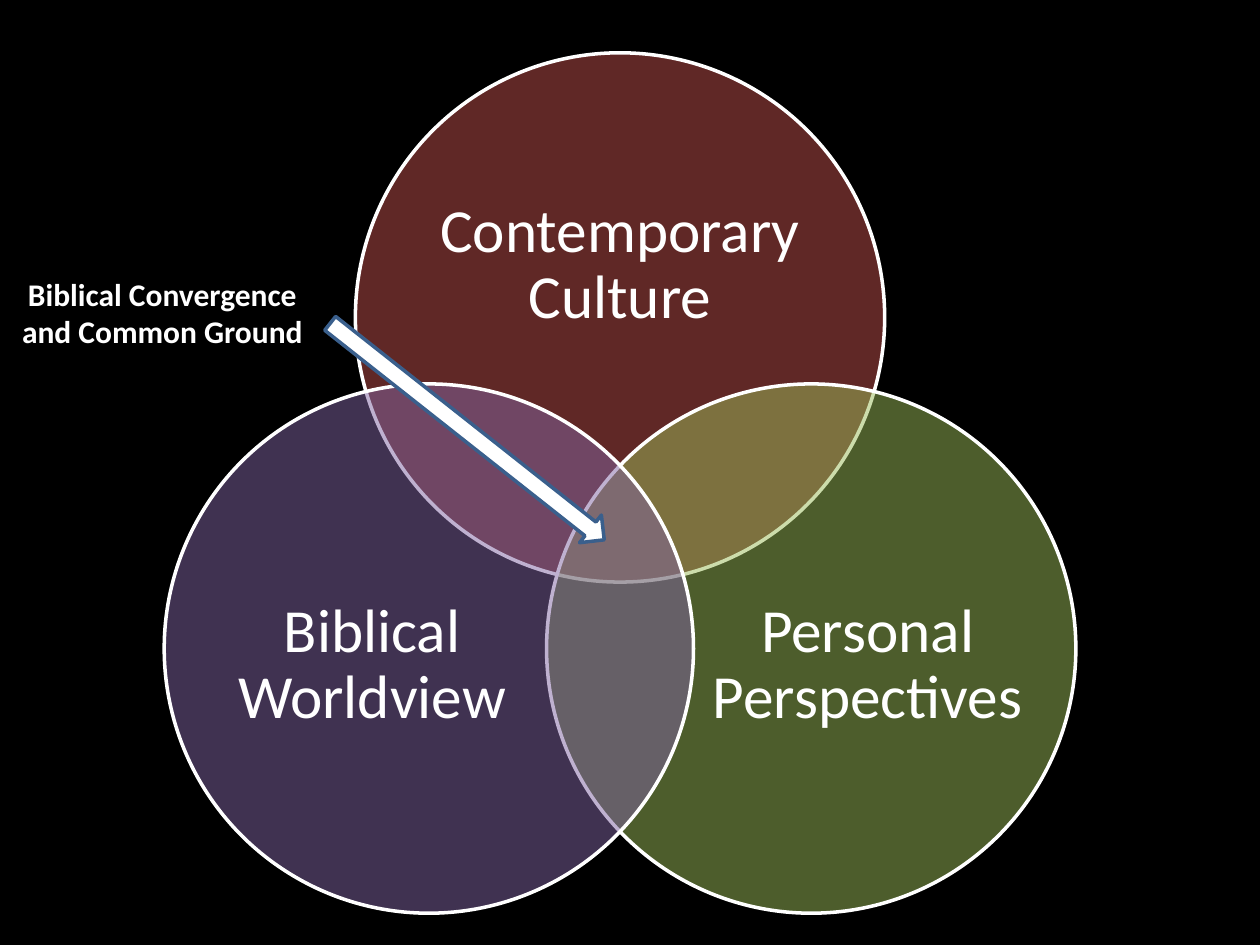
from math import cos, radians, sin

from lxml import etree
from pptx import Presentation
from pptx.dml.color import RGBColor
from pptx.enum.shapes import MSO_SHAPE as Shape
from pptx.enum.text import MSO_ANCHOR as Anchor, PP_ALIGN as Align
from pptx.oxml.ns import qn
from pptx.util import Cm, Pt

# Content: label, colour, angle from the diagram centre, label offset and size (cm)
CIRCLES = [
    ("Contemporary Culture", "red", -90, (0, -1.05), (7.82, 4.8)),
    ("Personal Perspectives", "green", 30, (1.14, 0.34), (6.4, 5.87)),
    ("Biblical Worldview", "purple", 150, (-1.14, 0.34), (6.4, 5.87)),
]
CALLOUT = "Biblical Convergence and Common Ground"

COLORS = {
    "black": "000000",
    "white": "FFFFFF",
    "red": "C0504D",
    "green": "9BBB59",
    "purple": "8064A2",
    "blue": "3A5F8C",
}
FONT = "Calibri"

# Geometry in centimetres
CENTER_X, CENTER_Y = 12.5, 10.85
SPREAD = 4.45
DIAMETER = 10.67


def color(name):
    return RGBColor.from_string(COLORS[name])


def centered(x, y, width, height):
    return Cm(x - width / 2), Cm(y - height / 2), Cm(width), Cm(height)


def add_shape(page, kind, frame, fill, line, opacity=100):
    shape = page.shapes.add_shape(kind, *frame)
    shape.shadow.inherit = False
    shape.fill.solid()
    shape.fill.fore_color.rgb = color(fill)
    shape.line.color.rgb = color(line)
    shape.line.width = Pt(2)
    if opacity < 100:
        tint = shape.fill._xPr.find(qn("a:solidFill"))[0]
        etree.SubElement(tint, qn("a:alpha"), val=str(opacity * 1000))
    return shape


def add_text(page, text, frame, size, bold=False, anchor=Anchor.TOP,
             spacing=1.0, margins=True):
    box = page.shapes.add_textbox(*frame)
    body = box.text_frame
    body.word_wrap = True
    body.vertical_anchor = anchor
    if not margins:
        body.margin_left = body.margin_right = 0
        body.margin_top = body.margin_bottom = 0
    para = body.paragraphs[0]
    para.alignment = Align.CENTER
    para.line_spacing = spacing
    span = para.add_run()
    span.text = text
    span.font.name = FONT
    span.font.size = Pt(size)
    span.font.bold = bold
    span.font.color.rgb = color("white")
    return box


def main():
    deck = Presentation()
    deck.slide_width, deck.slide_height = Cm(25.4), Cm(19.05)
    page = deck.slides.add_slide(deck.slide_layouts[6])
    page.background.fill.solid()
    page.background.fill.fore_color.rgb = color("black")

    # Overlapping circles with their labels
    for label, fill, angle, (shift_x, shift_y), size in CIRCLES:
        x = CENTER_X + SPREAD * cos(radians(angle))
        y = CENTER_Y + SPREAD * sin(radians(angle))
        add_shape(page, Shape.OVAL, centered(x, y, DIAMETER, DIAMETER),
                  fill, "white", opacity=50)
        add_text(page, label, centered(x + shift_x, y + shift_y, *size), 35,
                 anchor=Anchor.MIDDLE, spacing=0.9, margins=False)

    # Callout and arrow to the shared area
    add_text(page, CALLOUT, (Cm(0), Cm(5.41), Cm(6.55), Cm(1.8)), 18, bold=True)
    arrow = add_shape(page, Shape.DOWN_ARROW, centered(9.42, 8.7, 0.71, 7.04),
                      "white", "blue")
    arrow.rotation = 308.3

    deck.save("out.pptx")


if __name__ == "__main__":
    main()
